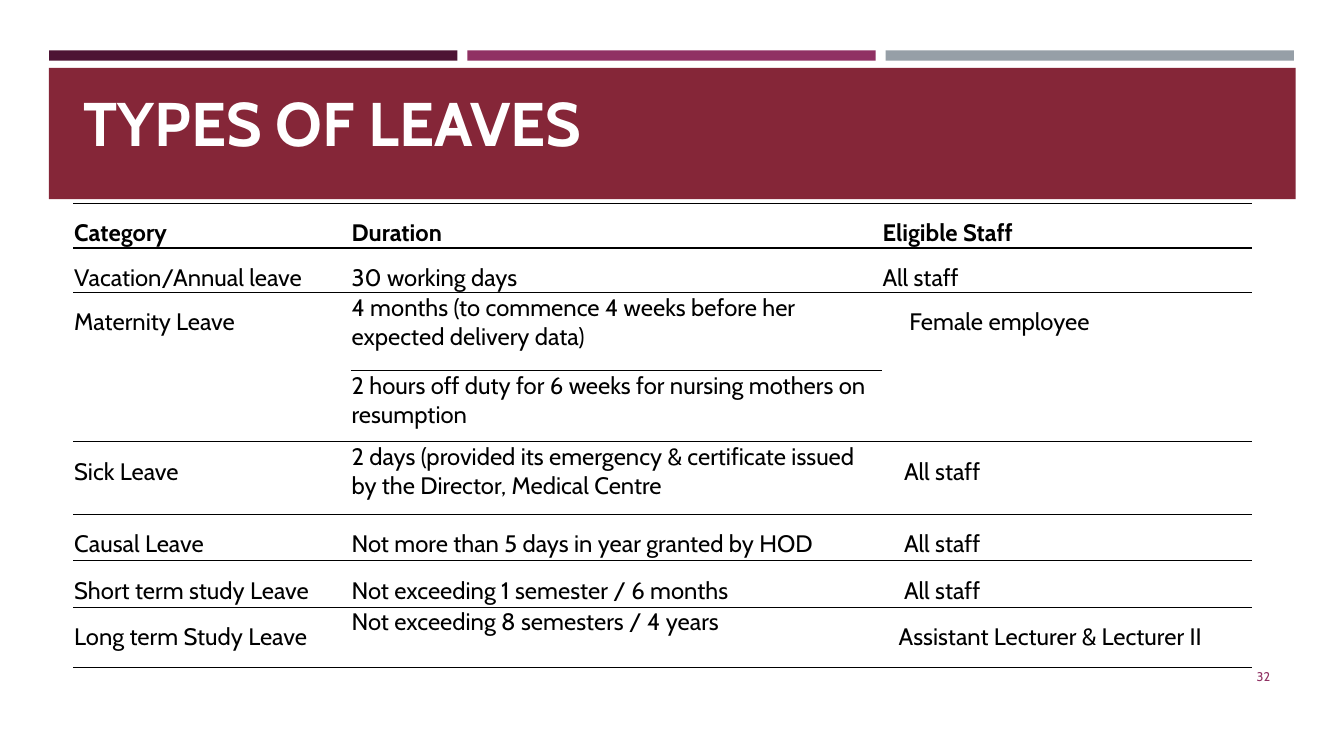
from dataclasses import dataclass

from lxml import etree
from pptx import Presentation
from pptx import util as u
from pptx.dml.color import RGBColor
from pptx.enum import shapes, text
from pptx.oxml import ns

COLORS = {
    "plum": "4D1434",
    "magenta": "903163",
    "grey": "969FA7",
    "maroon": "852638",
    "black": "000000",
    "white": "FFFFFF",
}
FONT = "Cabin"
SPACE_WIDTH = 0.136  # cm, one step of indent in the staff column


@dataclass
class Bar:
    left: float
    top: float
    width: float
    height: float
    color: str


@dataclass
class Leave:
    category: str
    duration: str
    staff: str
    height: float
    staff_indent: int = 0
    tight_duration: bool = False
    bold: bool = False
    rule_above: bool = True  # rule over the outer columns
    rule_below: bool = True


BARS = [
    Bar(1.24 + 10.54 * step, 1.27, 10.29, 0.26, color)
    for step, color in enumerate(("plum", "magenta", "grey"))
] + [Bar(1.23, 1.71, 31.42, 3.31, "maroon")]

COLUMN_WIDTHS = (6.99, 13.38, 9.32)
LEAVES = [
    Leave("Category", "Duration", "Eligible Staff", 1.12, bold=True),
    Leave("Vacation/Annual leave", "30 working days", "All staff", 1.12),
    Leave("Maternity Leave",
          "4 months (to commence 4 weeks before her expected delivery data)",
          "Female employee", 1.96, 5, True, rule_below=False),
    Leave("", "2 hours off duty for 6 weeks for nursing mothers on resumption",
          "", 1.8, tight_duration=True, rule_above=False),
    Leave("Sick Leave",
          "2 days (provided its emergency & certificate issued by the Director, Medical Centre",
          "All staff", 1.83, 4, True),
    Leave("Causal Leave", "Not more than 5 days in year granted by HOD", "All staff", 1.17, 4),
    Leave("Short term study Leave", "Not exceeding 1 semester / 6 months", "All staff", 1.17, 4),
    Leave("Long term Study Leave", "Not exceeding 8 semesters / 4 years",
          "Assistant Lecturer & Lecturer II", 1.52, 3, True),
]


def write(frame, words: str, *, size: float, color: str = "black", bold: bool = False,
          align=text.PP_ALIGN.LEFT, spacing: float = 1.0) -> None:
    """Put one formatted paragraph into a text frame."""
    frame.word_wrap = True
    paragraph = frame.paragraphs[0]
    paragraph.alignment = align
    paragraph.line_spacing = spacing
    paragraph.font.size = u.Pt(size)
    if not words:
        return
    run = paragraph.add_run()
    run.text = words
    run.font.name = FONT
    run.font.size = u.Pt(size)
    run.font.bold = bold
    run.font.color.rgb = RGBColor.from_string(COLORS[color])


def draw_bar(slide, bar: Bar) -> None:
    strip = slide.shapes.add_shape(shapes.MSO_SHAPE.RECTANGLE, u.Cm(bar.left), u.Cm(bar.top),
                                   u.Cm(bar.width), u.Cm(bar.height))
    strip.shadow.inherit = False
    strip.fill.solid()
    strip.fill.fore_color.rgb = RGBColor.from_string(COLORS[bar.color])
    strip.line.fill.background()


def set_borders(cell, above: bool, below: bool) -> None:
    """Rule a cell above and below, and leave its sides open."""
    properties = cell._tc.get_or_add_tcPr()
    for side, ruled in (("L", False), ("R", False), ("T", above), ("B", below)):
        line = etree.SubElement(properties, ns.qn(f"a:ln{side}"), w=str(u.Pt(1)))
        if ruled:
            fill = etree.SubElement(line, ns.qn("a:solidFill"))
            etree.SubElement(fill, ns.qn("a:srgbClr"), val=COLORS["black"])
        else:
            etree.SubElement(line, ns.qn("a:noFill"))


def draw_leaves(slide, leaves: list[Leave]) -> None:
    table = slide.shapes.add_table(
        len(leaves), len(COLUMN_WIDTHS), u.Cm(1.85), u.Cm(5.13),
        u.Cm(sum(COLUMN_WIDTHS)), u.Cm(sum(leave.height for leave in leaves))).table
    table.first_row = table.horz_banding = False
    for column, width in zip(table.columns, COLUMN_WIDTHS):
        column.width = u.Cm(width)

    for row, leave in enumerate(leaves):
        table.rows[row].height = u.Cm(leave.height)
        for column, words in enumerate((leave.category, leave.duration, leave.staff)):
            is_duration, is_staff = column == 1, column == 2
            cell = table.cell(row, column)
            set_borders(cell, is_duration or leave.rule_above, is_duration or leave.rule_below)
            cell.fill.background()
            indent = leave.staff_indent * SPACE_WIDTH if is_staff else 0
            cell.margin_left = u.Cm(0.02 + indent)
            cell.margin_right = cell.margin_top = u.Cm(0.02)
            cell.margin_bottom = 0
            tight = is_duration and leave.tight_duration
            write(cell.text_frame, words, size=17, bold=leave.bold,
                  spacing=1.0 if tight else 1.5)


def main() -> None:
    deck = Presentation()
    deck.slide_width, deck.slide_height = u.Cm(33.87), u.Cm(19.05)
    slide = deck.slides.add_slide(deck.slide_layouts[5])

    # Coloured strips and title band
    for bar in BARS:
        draw_bar(slide, bar)

    # Title, brought in front of the band
    title = slide.shapes.title
    title.left, title.top, title.width, title.height = map(u.Cm, (1.85, 1.75, 29.21, 2.39))
    title.text_frame.vertical_anchor = text.MSO_ANCHOR.BOTTOM
    title.text_frame.auto_size = text.MSO_AUTO_SIZE.NONE
    write(title.text_frame, "TYPES OF LEAVES", size=44, color="white", bold=True)
    title.element.getparent().append(title.element)

    # Leave table
    draw_leaves(slide, LEAVES)

    # Page number
    page_number = slide.shapes.add_textbox(u.Cm(29.34), u.Cm(16.54), u.Cm(2.92), u.Cm(1.02))
    page_number.text_frame.vertical_anchor = text.MSO_ANCHOR.MIDDLE
    write(page_number.text_frame, "32", size=9, color="magenta", align=text.PP_ALIGN.RIGHT)

    deck.save("out.pptx")


if __name__ == "__main__":
    main()
